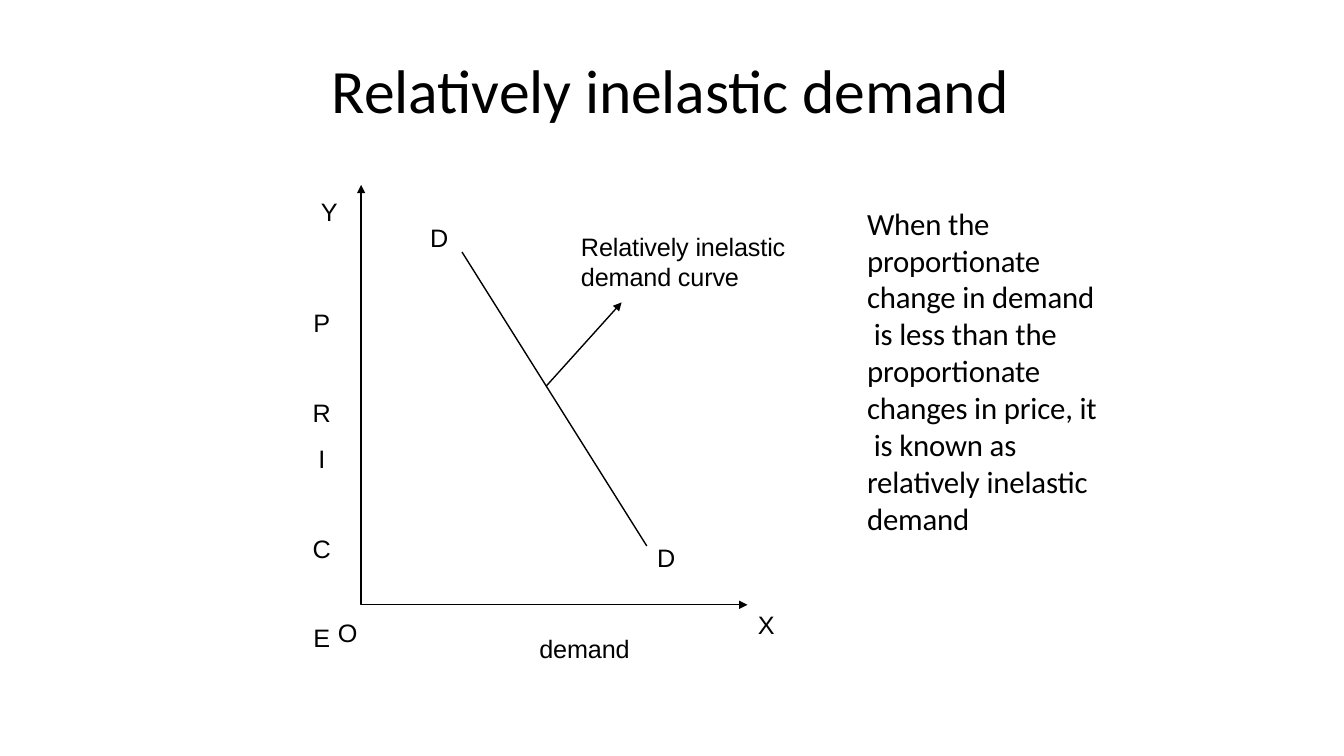
from lxml import etree
from pptx import Presentation, util as u
from pptx.dml.color import RGBColor
from pptx.enum import shapes, text
from pptx.oxml.ns import qn

# The slide is a grid of 160 columns by 90 rows
COLUMNS, ROWS = 160, 90
BLACK = "000000"

deck = Presentation()
deck.slide_width, deck.slide_height = u.Inches(13.33), u.Inches(7.5)
slide = deck.slides.add_slide(deck.slide_layouts[6])


def col(n):
    return int(deck.slide_width * n / COLUMNS)


def row(n):
    return int(deck.slide_height * n / ROWS)


def color(hex_code):
    return RGBColor.from_string(hex_code)


def add_text(left, top, width, height, lines, size=18, font="Arial",
             align=text.PP_ALIGN.LEFT, wrap=False):
    box = slide.shapes.add_textbox(col(left), row(top), col(width), row(height))
    frame = box.text_frame
    frame.word_wrap = wrap
    frame.margin_left = u.Inches(0.01)
    frame.margin_top = u.Inches(0.01)
    frame.margin_right = frame.margin_bottom = 0
    frame.text = lines
    for paragraph in frame.paragraphs:
        paragraph.alignment = align
        for run in paragraph.runs:
            run.font.size = u.Pt(size)
            run.font.name = font
            run.font.color.rgb = color(BLACK)
            # Slightly tightened letters, in hundredths of a point
            run._r.get_or_add_rPr().set("spc", "-10")
    return frame


def style_line(line_shape, arrow_ends=()):
    line_shape.line.color.rgb = color(BLACK)
    line_shape.line.width = u.Pt(1)
    for end in arrow_ends:
        etree.SubElement(line_shape.line._get_or_add_ln(), qn(end), type="triangle")
    etree.SubElement(line_shape._element.spPr, qn("a:effectLst"))


def add_line(start, end, arrow_ends=()):
    line = slide.shapes.add_connector(
        shapes.MSO_CONNECTOR.STRAIGHT,
        col(start[0]), row(start[1]), col(end[0]), row(end[1]))
    style_line(line, arrow_ends)


def add_axes(y_end, origin, x_end):
    corners = [(col(x), row(y)) for x, y in (y_end, origin, x_end)]
    outline = slide.shapes.build_freeform(*corners[0])
    outline.add_line_segments(corners[1:], close=False)
    axes = outline.convert_to_shape()
    axes.fill.background()
    style_line(axes, ("a:headEnd", "a:tailEnd"))


def add_title(left, top, width, height):
    frame = add_text(left, top, width, height, "Relatively inelastic demand",
                     44, "Calibri", wrap=True)
    frame.vertical_anchor = text.MSO_ANCHOR.MIDDLE


def add_graph(left, top, width, height):
    def at(x, y):
        return left + x, top + y

    # Axes meet at the origin
    base = height - 7
    add_axes(at(6, 0), at(6, base), at(width - 5, base))

    # Demand curve and its pointer
    add_line(at(18, 8), at(40, 43))
    add_line(at(28, 24), at(37, 14), ("a:tailEnd",))
    add_text(*at(32.05, 5.4), 25, 7.5, "Relatively inelastic\ndemand curve")

    # Single labels: words, column, row, width
    for label, x, y, label_width in (
            ("Y", 1.1, 1.3, 2.4), ("O", 3.1, 51.4, 2.6), ("X", 53.1, 50.4, 2.4),
            ("D", 14.1, 4.4, 2.5), ("D", 41.1, 42.4, 2.5),
            ("demand", 27.1, 53.3, 11.2)):
        add_text(*at(x, y), label_width, 4, label)

    # Price reads downwards
    price = add_text(*at(0, 12.7), 2.5, 43.5, "\n".join("PRICE"),
                     align=text.PP_ALIGN.CENTER)
    for letter in price.paragraphs:
        letter.line_spacing = 1.5
    for letter, gap in zip(price.paragraphs[1:], (31.4, 1, 31.4, 31.4)):
        letter.space_before = u.Pt(gap)


def add_definition(left, top, width, height):
    add_text(left, top, width, height,
             "When the proportionate change in demand\v is less than the "
             "proportionate changes in price, it\v is known as relatively "
             "inelastic demand", 22, "Calibri", wrap=True)


add_title(39.4, 6, 81.9, 9.1)
add_graph(37, 22, 57, 57)
add_definition(103.1, 24.2, 28.3, 40)

deck.save("out.pptx")
